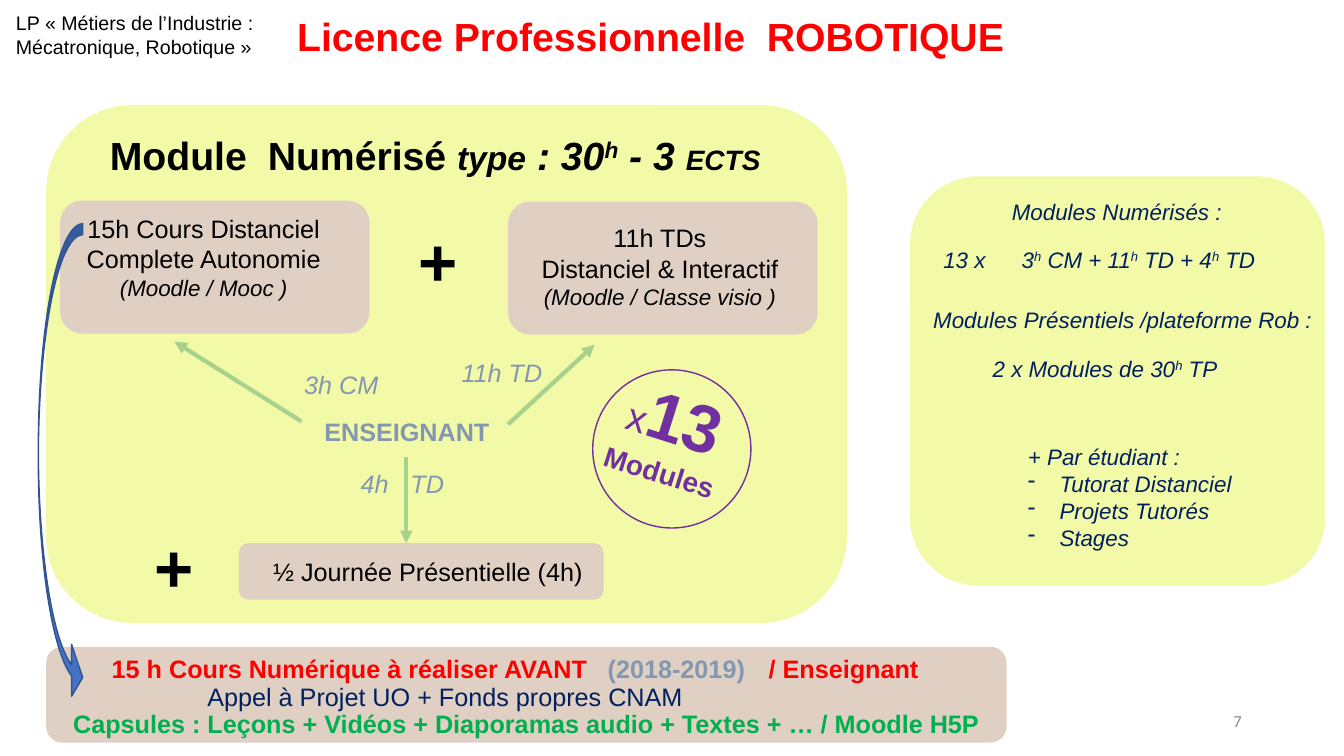
from lxml.etree import SubElement
from pptx import Presentation
from pptx.dml.color import RGBColor
from pptx.enum.shapes import MSO_CONNECTOR, MSO_SHAPE
from pptx.enum.text import MSO_ANCHOR, PP_ALIGN
from pptx.oxml.ns import qn
from pptx.util import Pt

BLACK = RGBColor(0x00, 0x00, 0x00)
RED = RGBColor(0xFF, 0x00, 0x00)
GREEN = RGBColor(0x00, 0xB0, 0x50)
NAVY = RGBColor(0x00, 0x20, 0x60)
SLATE = RGBColor(0x84, 0x97, 0xB0)
PURPLE = RGBColor(0x70, 0x30, 0xA0)
GREY = RGBColor(0x8C, 0x8C, 0x8C)
LIME = RGBColor(0xF2, 0xFA, 0xA8)
BEIGE = RGBColor(0xDF, 0xD0, 0xC3)
SAGE = RGBColor(0xA9, 0xD1, 0x8E)
BLUE = RGBColor(0x44, 0x72, 0xC4)
DARK_BLUE = RGBColor(0x32, 0x54, 0x91)

LEFT, CENTER, RIGHT = PP_ALIGN.LEFT, PP_ALIGN.CENTER, PP_ALIGN.RIGHT

deck = Presentation()
deck.slide_width, deck.slide_height = Pt(960), Pt(540)
page = deck.slides.add_slide(deck.slide_layouts[6])


def add_figure(kind, left, top, width, height, fill=None, line=None):
    figure = page.shapes.add_shape(kind, Pt(left), Pt(top), Pt(width), Pt(height))
    figure.shadow.inherit = False
    if fill is None:
        figure.fill.background()
    else:
        figure.fill.solid()
        figure.fill.fore_color.rgb = fill
    if line is None:
        figure.line.fill.background()
    else:
        figure.line.color.rgb = line
        figure.line.width = Pt(1)
    return figure


def add_text(left, top, width, height, color, paragraphs, align=LEFT, tab=None, font="Arial"):
    """Each paragraph is a list of (text, size, style); style holds b, i, ^ (superscript) or - (bullet)."""
    box = page.shapes.add_textbox(Pt(left), Pt(top), Pt(width), Pt(height))
    box.text_frame.word_wrap = True
    for index, runs in enumerate(paragraphs):
        para = box.text_frame.paragraphs[0] if index == 0 else box.text_frame.add_paragraph()
        para.alignment = align
        properties = para._p.get_or_add_pPr()
        if "-" in runs[0][2]:
            properties.set("marL", str(Pt(22.5)))
            properties.set("indent", str(Pt(-22.5)))
            SubElement(properties, qn("a:buFontTx"))
            SubElement(properties, qn("a:buChar"), char="-")
        if tab:
            stops = SubElement(properties, qn("a:tabLst"))
            SubElement(stops, qn("a:tab"), pos=str(Pt(tab)), algn="l")
        for text, size, style in runs:
            span = para.add_run()
            span.text = text
            span.font.name = font
            span.font.size = Pt(size)
            span.font.bold = "b" in style
            span.font.italic = "i" in style
            span.font.color.rgb = color
            if "^" in style:
                span._r.get_or_add_rPr().set("baseline", "30000")
    return box


# Rounded panels, back to front
for left, top, width, height, fill in [
    (33, 462, 686, 68.4, BEIGE),
    (33, 75, 572, 370, LIME),
    (43, 143.3, 221, 95, BEIGE),
    (363, 144, 221, 95, BEIGE),
    (170.6, 388, 260.6, 40.3, BEIGE),
    (650, 126, 296.6, 292.3, LIME),
]:
    add_figure(MSO_SHAPE.ROUNDED_RECTANGLE, left, top, width, height, fill)

# Header
add_text(4.3, 4.3, 188, 41, BLACK, [
    [("LP « Métiers de l’Industrie :", 14, "")],
    [("Mécatronique, Robotique »", 14, "")],
])
add_text(205.2, 5, 534, 41, RED, [[("Licence Professionnelle\tROBOTIQUE", 28, "b")]], tab=335.5)

# Module title and its three parts
add_text(71.4, 90, 500, 41, BLACK, [[
    ("Module\tNumérisé ", 28, "b"), ("type", 24, "bi"), (" : 30", 28, "bi"),
    ("h", 28, "bi^"), (" - 3 ", 28, "bi"), ("ECTS", 20, "bi"),
]], tab=112.8)
add_text(54, 149, 183, 70.6, BLACK, [
    [("15h Cours Distanciel", 18, "")],
    [("Complete Autonomie", 18, "")],
    [("(Moodle / Mooc )", 16, "i")],
], CENTER)
add_text(379.4, 155.5, 184, 70.6, BLACK, [
    [("11h TDs", 18, "")],
    [("Distanciel & Interactif", 18, "")],
    [("(Moodle / Classe visio )", 16, "i")],
], CENTER)
add_text(188, 393.8, 240, 29, BLACK, [[("½ Journée Présentielle (4h)", 18, "")]])
for left, top in [(291.6, 153.4), (103, 371.5)]:
    add_text(left, top, 43, 65.5, BLACK, [[("+", 48, "b")]])

# Teacher hours and arrows
add_text(224.6, 293.8, 138, 29, SLATE, [[("ENSEIGNANT", 18, "b")]])
for left, top, hours, tab in [
    (210.2, 260, "3h CM", None), (322.6, 252, "11h TD", None), (250.6, 331.2, "4h\tTD", 35.5),
]:
    add_text(left, top, 80, 29, SLATE, [[(hours, 18, "i")]], tab=tab)
for start_x, start_y, end_x, end_y in [
    (215.3, 301, 124.6, 244), (363, 303, 424.8, 246.2), (290.2, 326.2, 290.2, 388),
]:
    arrow = page.shapes.add_connector(
        MSO_CONNECTOR.STRAIGHT, Pt(start_x), Pt(start_y), Pt(end_x), Pt(end_y))
    arrow.line.color.rgb = SAGE
    arrow.line.width = Pt(3)
    SubElement(arrow.line._get_or_add_ln(), qn("a:tailEnd"), type="triangle")
    SubElement(arrow._element.spPr, qn("a:effectLst"))

# Badge with the number of modules
badge = add_text(431.3, 265, 96.5, 90, PURPLE, [
    [("x", 28, ""), ("13", 48, "b")],
    [("Modules", 20, "b")],
], CENTER)
badge.rotation = 17.6
add_figure(MSO_SHAPE.FLOWCHART_CONNECTOR, 423.4, 264.2, 113, 113, line=PURPLE)

# Curved arrow down to the bottom band
curve = add_figure(MSO_SHAPE.CURVED_RIGHT_ARROW, 27.4, 159.8, 31.7, 342.7, BLUE, DARK_BLUE)
for index, value in enumerate([0.25, 1.17, 0.25]):
    curve.adjustments[index] = value

# Bottom band
for left, top, width, color, text, style, align in [
    (72.7, 463, 358, RED, "15 h Cours Numérique à réaliser AVANT", "b", LEFT),
    (427, 463, 114, SLATE, "(2018-2019)", "b", LEFT),
    (542, 463, 124, RED, "/ Enseignant", "b", LEFT),
    (141, 483, 362, NAVY, "Appel à Projet UO + Fonds propres CNAM", "", LEFT),
    (39, 502.6, 674, GREEN,
     "Capsules : Leçons + Vidéos + Diaporamas audio + Textes + … / Moodle H5P", "b", CENTER),
]:
    add_text(left, top, width, 29, color, [[(text, 18, style)]], align)

# Side panel
add_text(715.7, 138.2, 166, 26.6, NAVY, [[("Modules Numérisés :", 16, "i")]])
add_text(666.7, 172, 245, 26.6, NAVY, [[
    ("13 x\t3", 16, "i"), ("h", 16, "i^"), (" CM + 11", 16, "i"), ("h", 16, "i^"),
    (" TD + 4", 16, "i"), ("h", 16, "i^"), (" TD", 16, "i"),
]], tab=56)
add_text(659.5, 215.3, 290, 26.6, NAVY, [[("Modules Présentiels /plateforme Rob :", 16, "i")]])
add_text(702, 249.8, 180, 26.6, NAVY, [[
    ("2 x Modules de 30", 16, "i"), ("h", 16, "i^"), (" TP", 16, "i"),
]])
add_text(727.2, 313.2, 176, 85, NAVY, [
    [("+ Par étudiant :", 16, "i")],
    [("Tutorat Distanciel", 16, "i-")],
    [("Projets Tutorés", 16, "i-")],
    [("Stages", 16, "i-")],
])

# Page number
number = add_text(678.2, 500.4, 216, 28.8, GREY, [[("7", 12, "")]], RIGHT, font="Calibri")
number.text_frame.vertical_anchor = MSO_ANCHOR.MIDDLE

deck.save("out.pptx")
